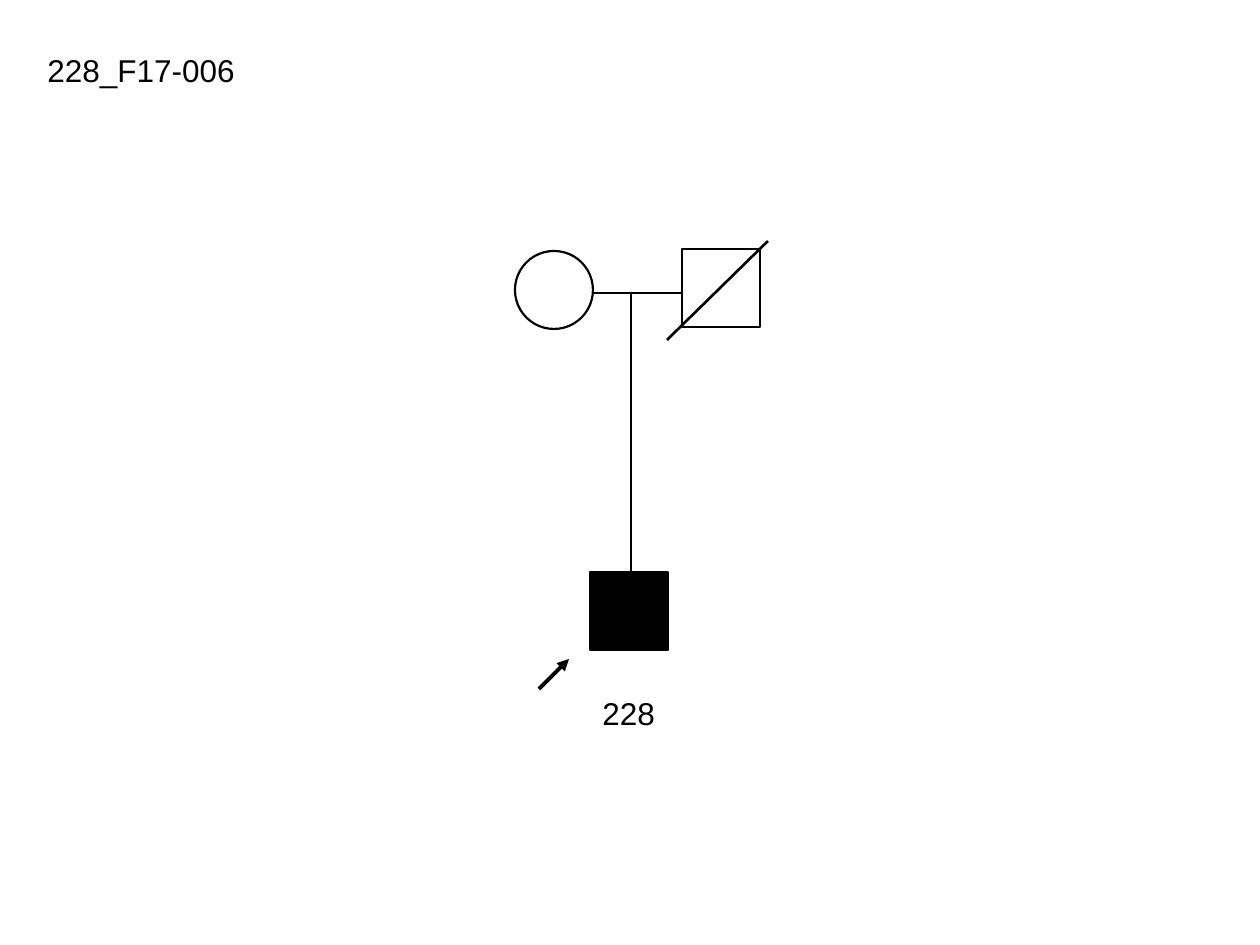
import pptx
import pptx.dml.color
import pptx.enum.shapes
import pptx.enum.text
import pptx.oxml.ns
import pptx.util
from lxml import etree

BLACK = pptx.dml.color.RGBColor(0x00, 0x00, 0x00)
WHITE = pptx.dml.color.RGBColor(0xFF, 0xFF, 0xFF)
SHAPE = pptx.enum.shapes.MSO_SHAPE
PX_PER_INCH = 126
SYMBOL = 78  # side of every pedigree symbol


def px(length):
    return pptx.util.Emu(round(length * 914400 / PX_PER_INCH))


class Pedigree:
    font = "Arial"
    text_size = 18

    def __init__(self, slide):
        self.shapes = slide.shapes

    def symbol(self, kind, left, top, fill=None):
        person = self.shapes.add_shape(kind, px(left), px(top), px(SYMBOL), px(SYMBOL))
        person.shadow.inherit = False
        if fill is None:
            person.fill.background()
        else:
            person.fill.solid()
            person.fill.fore_color.rgb = fill
        person.line.color.rgb = BLACK
        person.line.width = pptx.util.Pt(1.25)

    def line(self, x1, y1, x2, y2, width=1.5, arrow=False):
        connector = self.shapes.add_connector(
            pptx.enum.shapes.MSO_CONNECTOR.STRAIGHT, px(x1), px(y1), px(x2), px(y2))
        connector.line.color.rgb = BLACK
        connector.line.width = pptx.util.Pt(width)
        if arrow:
            outline = connector.line._get_or_add_ln()
            etree.SubElement(outline, pptx.oxml.ns.qn("a:tailEnd"), type="triangle")
        etree.SubElement(connector._element.spPr, pptx.oxml.ns.qn("a:effectLst"))

    def label(self, text, left, top, width, height):
        box = self.shapes.add_textbox(px(left), px(top), px(width), px(height))
        frame = box.text_frame
        frame.word_wrap = False
        frame.auto_size = pptx.enum.text.MSO_AUTO_SIZE.SHAPE_TO_FIT_TEXT
        frame.text = text
        font = frame.paragraphs[0].runs[0].font
        font.name = self.font
        font.size = pptx.util.Pt(self.text_size)
        font.color.rgb = BLACK


def main():
    deck = pptx.Presentation()
    deck.slide_width = px(1260)
    deck.slide_height = px(945)
    pedigree = Pedigree(deck.slides.add_slide(deck.slide_layouts[6]))

    # Parents
    pedigree.symbol(SHAPE.OVAL, 515, 251, WHITE)
    pedigree.symbol(SHAPE.RECTANGLE, 682, 249)

    # Marriage and descent lines
    pedigree.line(683, 293, 593, 293)
    pedigree.line(631, 292, 631, 573, width=1.25)

    # Affected child
    pedigree.symbol(SHAPE.RECTANGLE, 590, 572, BLACK)

    # Family and child labels
    pedigree.label("228_F17-006", 35, 45, 214, 50)
    pedigree.label("228", 590, 688, 78, 50)

    # Deceased mark and proband arrow
    pedigree.line(667, 340, 768, 241)
    pedigree.line(539, 689, 569, 659, width=2.25, arrow=True)

    deck.save("out.pptx")


if __name__ == "__main__":
    main()
